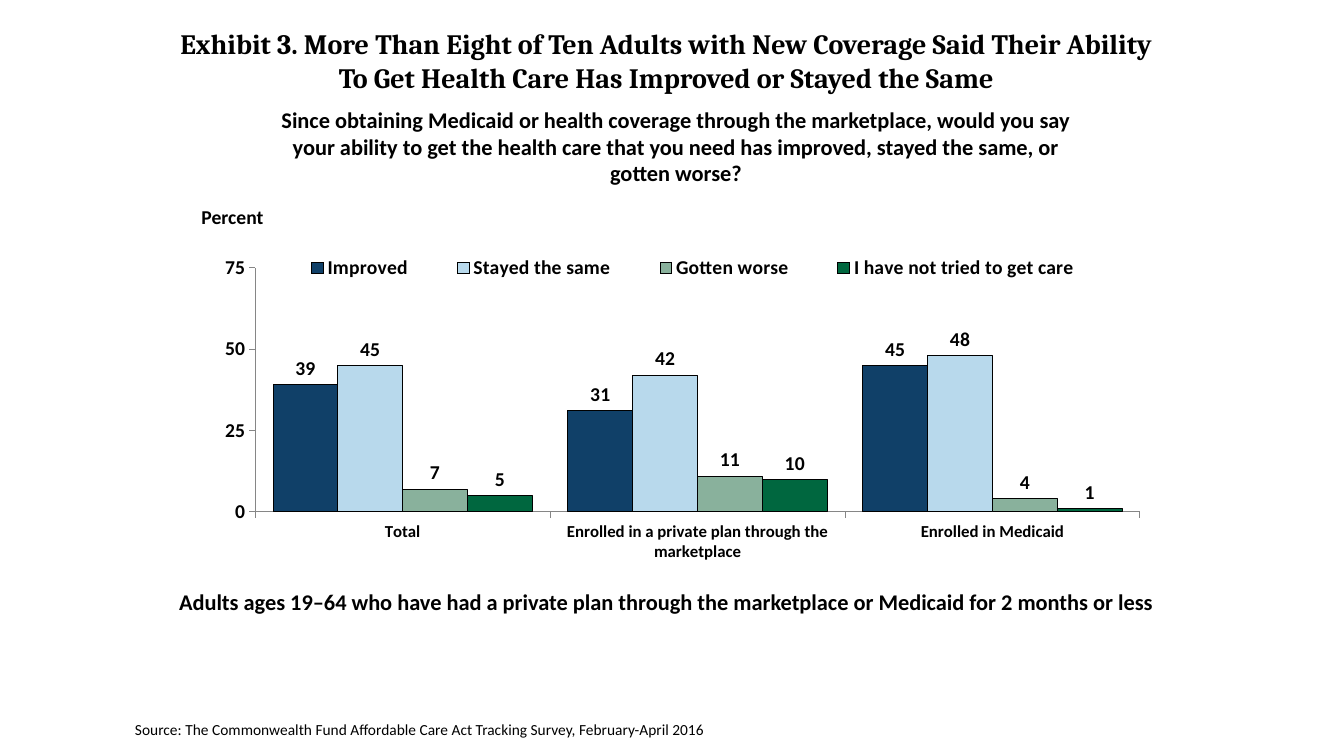
import pptx
import pptx.chart.data
import pptx.dml.color
import pptx.enum.chart
import pptx.enum.text
import pptx.oxml
import pptx.oxml.ns
import pptx.util

Inches, Pt = pptx.util.Inches, pptx.util.Pt
RGBColor = pptx.dml.color.RGBColor
ALIGN, ANCHOR = pptx.enum.text.PP_ALIGN, pptx.enum.text.MSO_ANCHOR

BLACK = RGBColor(0x00, 0x00, 0x00)
AXIS_GRAY = RGBColor(0x86, 0x86, 0x86)
NAVY = RGBColor(0x10, 0x40, 0x68)
PALE_BLUE = RGBColor(0xB8, 0xD9, 0xEC)
SAGE = RGBColor(0x89, 0xB1, 0x9C)
GREEN = RGBColor(0x00, 0x67, 0x3F)

CATEGORIES = ["Total", "Enrolled in a private plan through the marketplace",
              "Enrolled in Medicaid"]
ANSWERS = [
    ("Improved", (39, 31, 45), NAVY),
    ("Stayed the same", (45, 42, 48), PALE_BLUE),
    ("Gotten worse", (7, 11, 4), SAGE),
    ("I have not tried to get care", (5, 10, 1), GREEN),
]

# Text, box in inches, format
TEXTS = [
    ("Exhibit 3. More Than Eight of Ten Adults with New Coverage Said Their Ability "
     "To Get Health Care Has Improved or Stayed the Same",
     (1.61, 0.2, 10, 0.8), dict(size=20, name="Cambria", anchor=ANCHOR.MIDDLE)),
    ("Since obtaining Medicaid or health coverage through the marketplace, would you "
     "say your ability to get the health care that you need has improved, stayed the "
     "same, or gotten worse?",
     (2.54, 1, 8.33, 0.91), dict(size=16)),
    ("Percent", (1.9, 1.98, 0.82, 0.34),
     dict(size=14, align=ALIGN.LEFT, wrap=False)),
    ("Adults ages 19–64 who have had a private plan through the marketplace or "
     "Medicaid for 2 months or less",
     (1.61, 5.79, 10, 0.37), dict(size=16)),
    ("Source: The Commonwealth Fund Affordable Care Act Tracking Survey, "
     "February-April 2016",
     (1.24, 7.09, 9.78, 0.29), dict(size=11, bold=False, align=ALIGN.LEFT)),
]


def style_font(font, size, name="Calibri", bold=True):
    values = {"size": Pt(size), "name": name, "bold": bold}
    for key, value in values.items():
        setattr(font, key, value)
    font.color.rgb = BLACK


def add_text(slide, text, box, size, name="Calibri", bold=True,
             align=ALIGN.CENTER, anchor=ANCHOR.TOP, wrap=True):
    frame = slide.shapes.add_textbox(*map(Inches, box)).text_frame
    frame.word_wrap = wrap
    frame.vertical_anchor = anchor
    para = frame.paragraphs[0]
    para.alignment = align
    span = para.add_run()
    span.text = text
    style_font(span.font, size, name, bold)


def set_layout(element, index, shares, inner=False):
    """Place a chart part by its shares of the chart's size."""
    for old in element.findall(pptx.oxml.ns.qn("c:layout")):
        element.remove(old)
    target = '<c:layoutTarget val="inner"/>' if inner else ""
    modes = '<c:xMode val="edge"/><c:yMode val="edge"/>'
    sizes = "".join(f'<c:{key} val="{share}"/>' for key, share in zip("xywh", shares))
    element.insert(index, pptx.oxml.parse_xml(
        f'<c:layout {pptx.oxml.ns.nsdecls("c")}><c:manualLayout>'
        f'{target}{modes}{sizes}</c:manualLayout></c:layout>'))


def style_axis(axis, size):
    values = {"has_major_gridlines": False,
              "major_tick_mark": pptx.enum.chart.XL_TICK_MARK.OUTSIDE,
              "minor_tick_mark": pptx.enum.chart.XL_TICK_MARK.NONE}
    for key, value in values.items():
        setattr(axis, key, value)
    axis.format.line.color.rgb = AXIS_GRAY
    axis.format.line.width = Pt(0.75)
    style_font(axis.tick_labels.font, size)


def add_answer_chart(slide, box):
    data = pptx.chart.data.CategoryChartData(number_format="0")
    data.categories = CATEGORIES
    for name, values, _ in ANSWERS:
        data.add_series(name, values)
    chart = slide.shapes.add_chart(
        pptx.enum.chart.XL_CHART_TYPE.COLUMN_CLUSTERED, *map(Inches, box), data).chart
    chart.has_title = False
    style_font(chart.font, 14)

    # Axes
    style_axis(chart.category_axis, 12)
    style_axis(chart.value_axis, 14)
    for key, value in {"minimum_scale": 0, "maximum_scale": 75, "major_unit": 25}.items():
        setattr(chart.value_axis, key, value)
    chart.value_axis.tick_labels.number_format = "0"
    chart.value_axis.tick_labels.number_format_is_linked = False

    # Columns and their labels
    plot = chart.plots[0]
    for key, value in {"gap_width": 55, "overlap": 0, "vary_by_categories": False}.items():
        setattr(plot, key, value)
    for series, (_, _, color) in zip(plot.series, ANSWERS):
        series.format.fill.solid()
        series.format.fill.fore_color.rgb = color
        series.format.line.color.rgb = BLACK
        series.format.line.width = Pt(0.75)
        labels = series.data_labels
        values = {"show_value": True, "number_format": "0",
                  "number_format_is_linked": False,
                  "position": pptx.enum.chart.XL_LABEL_POSITION.OUTSIDE_END}
        for key, value in values.items():
            setattr(labels, key, value)
        style_font(labels.font, 14)

    # Legend and plot placement
    chart.has_legend = True
    legend = chart.legend
    legend.position = pptx.enum.chart.XL_LEGEND_POSITION.TOP
    legend.include_in_layout = False
    style_font(legend.font, 14)
    set_layout(legend._element, 1, (0.08, 0.03, 0.88, 0.08))
    set_layout(chart._chartSpace.chart.plotArea, 0, (0.066, 0.07, 0.918, 0.658), inner=True)


def main():
    deck = pptx.Presentation()
    deck.slide_width, deck.slide_height = Inches(13.33), Inches(7.5)
    slide = deck.slides.add_slide(deck.slide_layouts[6])
    add_answer_chart(slide, (1.9, 2.4, 9.56, 3.68))
    for text, box, style in TEXTS:
        add_text(slide, text, box, **style)
    deck.save("out.pptx")


if __name__ == "__main__":
    main()
